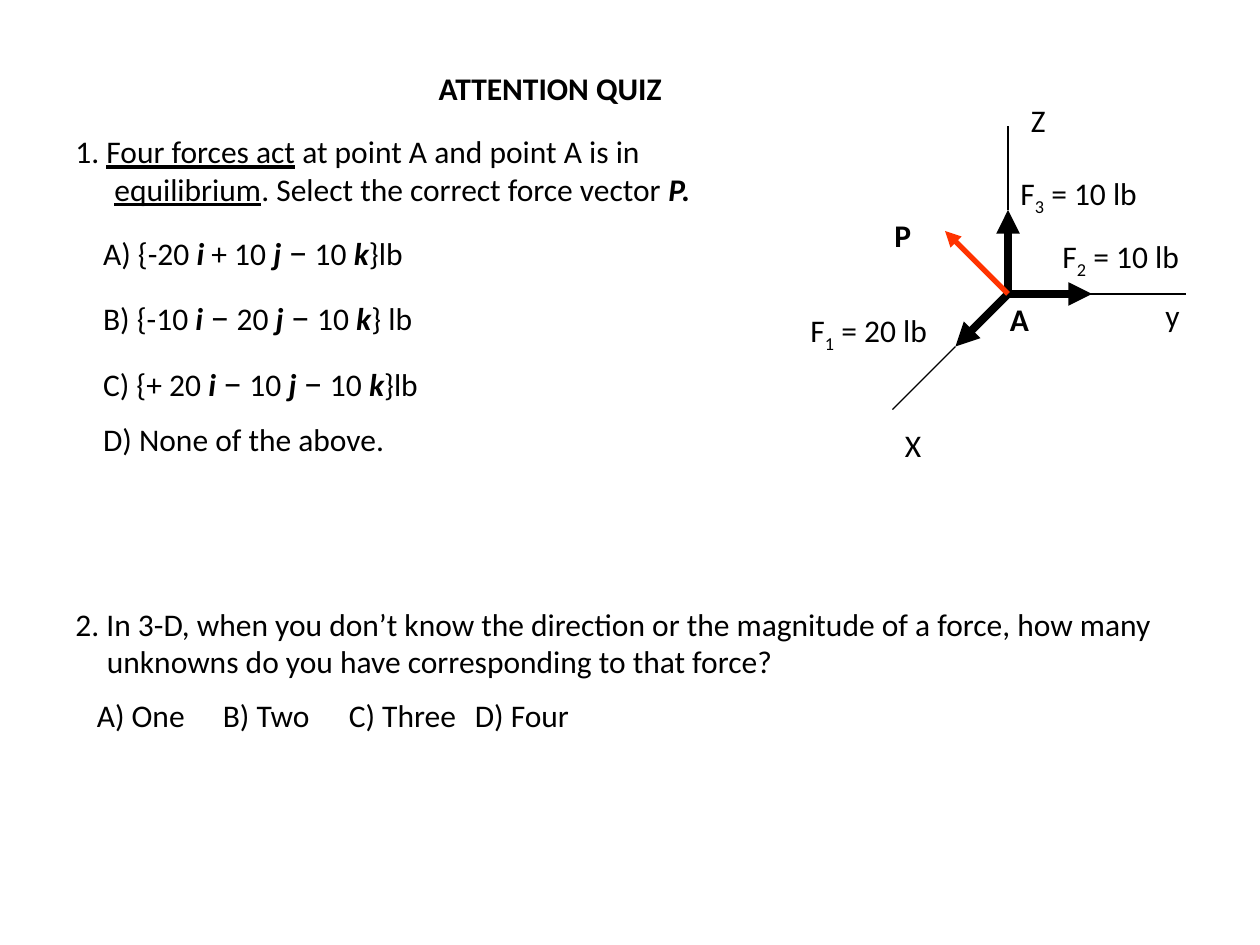
from dataclasses import dataclass
from typing import NamedTuple

import pptx
import pptx.dml.color
import pptx.enum.shapes
import pptx.oxml
import pptx.oxml.ns
import pptx.util

COLORS = {"ink": "000000", "p": "FF3300"}
COLS, ROWS = 120, 90

prs = pptx.Presentation()
prs.slide_width, prs.slide_height = pptx.util.Inches(10), pptx.util.Inches(7.5)


class Run(NamedTuple):
    text: str
    style: str = ""
    size: float = 18


@dataclass
class Para:
    runs: list[Run]
    margin: float = 0
    hang: float = 0
    tabs: tuple[float, ...] = ()


@dataclass
class Line:
    start: tuple[float, float]
    end: tuple[float, float]
    width: float = 0.75
    color: str = "ink"
    arrow: bool = False


@dataclass
class Label:
    runs: list[Run]
    col: float
    row: float
    cols: float
    wrap: bool = True


def x(col: float) -> int:
    return round(prs.slide_width * col / COLS)


def y(row: float) -> int:
    return round(prs.slide_height * row / ROWS)


def add_tabs(pPr, stops: tuple[float, ...]) -> None:
    tabs = pptx.oxml.parse_xml("<a:tabLst %s/>" % pptx.oxml.ns.nsdecls("a"))
    for stop in stops:
        tab = tabs.makeelement(pptx.oxml.ns.qn("a:tab"),
                               {"pos": str(pptx.util.Inches(stop)), "algn": "l"})
        tabs.append(tab)
    pPr.append(tabs)


def add_text(shapes, paras: list[Para], *, col: float, row: float, cols: float,
             rows: float = 4.8, wrap: bool = True, font: str = "Calibri",
             color: str = "ink") -> None:
    sp = shapes.add_textbox(x(col), y(row), x(cols), y(rows))
    tf = sp.text_frame
    tf.word_wrap = wrap
    for i, para in enumerate(paras):
        p = tf.add_paragraph() if i else tf.paragraphs[0]
        if i:
            p.space_before = pptx.util.Pt(max(run.size for run in para.runs) / 2)
        pPr = p._p.get_or_add_pPr()
        pPr.set("marL", str(pptx.util.Inches(para.margin)))
        pPr.set("indent", str(pptx.util.Inches(-para.hang)))
        if para.tabs:
            add_tabs(pPr, para.tabs)
        for run in para.runs:
            r = p.add_run()
            r.text = run.text
            r.font.name, r.font.size = font, pptx.util.Pt(run.size)
            r.font.color.rgb = pptx.dml.color.RGBColor.from_string(COLORS[color])
            r.font.bold = "b" in run.style
            r.font.italic = "i" in run.style
            r.font.underline = "u" in run.style
            if "s" in run.style:
                r._r.get_or_add_rPr().set("baseline", "-25000")


def add_line(shapes, line: Line) -> None:
    cx = shapes.add_connector(pptx.enum.shapes.MSO_CONNECTOR.STRAIGHT,
                              x(line.start[0]), y(line.start[1]),
                              x(line.end[0]), y(line.end[1]))
    cx.line.width = pptx.util.Pt(line.width)
    cx.line.color.rgb = pptx.dml.color.RGBColor.from_string(COLORS[line.color])
    ns = pptx.oxml.ns.nsdecls("a")
    if line.arrow:
        cx.line._get_or_add_ln().append(
            pptx.oxml.parse_xml(f'<a:tailEnd {ns} type="triangle"/>'))
    cx._element.spPr.append(pptx.oxml.parse_xml(f"<a:effectLst {ns}/>"))


def vector(letter: str, i: str, j_sign: str, j: str, end: str) -> Para:
    sign = Run(j_sign, size=22 if j_sign == "–" else 18)
    return Para([Run(f"{letter}) {{{i} "), Run("i ", "bi"), sign, Run(f" {j} "),
                 Run("j ", "bi"), Run("–", size=22), Run(" 10 "),
                 Run("k", "bi"), Run("}" + end)], margin=0.22)


def force(number: int, pounds: int) -> list[Run]:
    return [Run("F"), Run(str(number), "s"), Run(f" = {pounds} lb")]


TITLE = [Para([Run("ATTENTION QUIZ", "b")], margin=0.05)]
QUESTION_1 = [
    Para([Run("1. "), Run("Four forces act", "u"),
          Run(" at point A and point A is in "), Run("equilibrium", "u"),
          Run(". Select the correct force vector "), Run("P.", "bi")],
         margin=0.31, hang=0.31),
    vector("A", "-20", "+", "10", "lb"),
    vector("B", "-10", "–", "20", " lb"),
    vector("C", "+ 20", "–", "10", "lb"),
    Para([Run("D) None of the above.")], margin=0.22),
]
QUESTION_2 = [
    Para([Run("2. In 3-D, when you don’t know the direction or the magnitude of a "
              "force, how many unknowns do you have corresponding to that force?")],
         margin=0.25, hang=0.25),
    Para([Run("A) One\tB) Two\tC) Three\tD) Four")],
         margin=0.17, tabs=(1.15, 2.06, 3.14)),
]

A, F1, F2, F3 = (96, 28), (91, 33), (104, 28), (96, 20)
LINES = [
    *(Line(A, tip, 4.5, arrow=True) for tip in (F3, F1, F2)),
    Line(A, (90, 22), 3, "p", True),
    Line(F1, (85, 39)),
    Line((102, 28), (113, 28)),
    Line(F3, (96, 12)),
]
LABELS = [
    Label([Run("Z")], 97, 9, 8),
    Label(force(3, 10), 96, 16, 15),
    Label([Run("P", "b")], 84, 20, 5.2),
    Label(force(1, 20), 76, 29, 15),
    Label([Run("X")], 85, 40, 7),
    Label([Run("A", "b")], 95, 28, 5),
    Label(force(2, 10), 100, 22, 15),
    Label([Run("y")], 109.8, 27.6, 4.4, wrap=False),
]


def main() -> None:
    s = prs.slides.add_slide(prs.slide_layouts[6])
    add_text(s.shapes, TITLE, col=40, row=6, cols=40)
    add_text(s.shapes, QUESTION_1, col=6, row=12, cols=66, rows=34)
    add_text(s.shapes, QUESTION_2, col=6, row=57, cols=105, rows=22.8)
    diagram = s.shapes.add_group_shape()
    for line in LINES:
        add_line(diagram.shapes, line)
    for label in LABELS:
        add_text(diagram.shapes, [Para(label.runs)], col=label.col, row=label.row,
                 cols=label.cols, wrap=label.wrap)
    prs.save("out.pptx")


if __name__ == "__main__":
    main()
